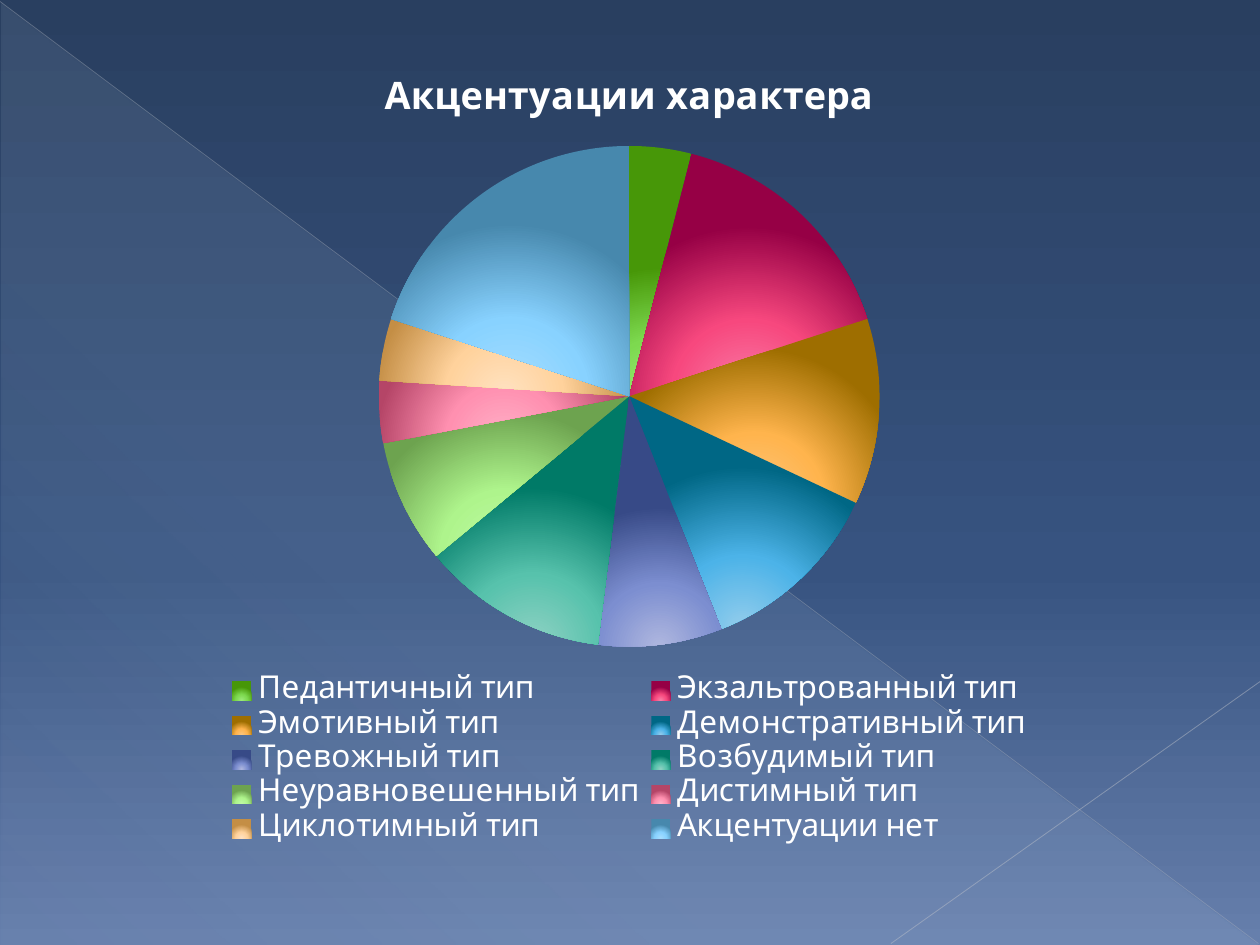
from dataclasses import dataclass

from lxml.etree import SubElement
from pptx import Presentation
from pptx.chart.data import CategoryChartData
from pptx.dml.color import RGBColor
from pptx.enum.chart import XL_CHART_TYPE, XL_LEGEND_POSITION
from pptx.enum.shapes import MSO_CONNECTOR, MSO_SHAPE
from pptx.oxml import parse_xml
from pptx.oxml.ns import nsdecls, qn
from pptx.util import Cm, Pt


@dataclass(frozen=True)
class Theme:
    font: str = "League Spartan"
    text: str = "FFFFFF"
    title_size: float = 21.6
    legend_size: float = 18
    # Each stop: position %, colour, opacity %
    background: tuple = ((0, "293F60", 100), (60, "375380", 100), (100, "667FAC", 100))
    veil: tuple = ((0, "D6ECFF", 10), (70, "D6ECFF", 8), (100, "D6ECFF", 1))
    long_line: str = "B7BCC5"
    short_line: str = "BFC3CB"


TITLE = "Акцентуации характера"
# Type, share, then slice colours from the glowing centre to the rim
SLICES = [
    ("Педантичный тип", 4, "9CEB7A", "7DD94F", "479708"),
    ("Экзальтрованный тип", 16, "F97FA8", "F7487E", "960045"),
    ("Эмотивный тип", 12, "FBC680", "FFB44D", "9E6E00"),
    ("Демонстративный тип", 12, "94CDEC", "4CB3E8", "006785"),
    ("Тревожный тип", 8, "AFB7DF", "7C8ED0", "374A87"),
    ("Возбудимый тип", 12, "90D2C4", "57C2AC", "007A67"),
    ("Неуравновешенный тип", 8, "BFFAA5", "AEF48C", "6DA34F"),
    ("Дистимный тип", 4, "FFB2C8", "FF90B0", "B54567"),
    ("Циклотимный тип", 4, "FFE2C2", "FFD29C", "C48E45"),
    ("Акцентуации нет", 20, "A6DEFF", "88D2FF", "4788AD"),
]


def set_gradient(fill, stops, angle=None):
    """Linear at the given angle; without one, a glow from the bottom centre."""
    marks = "".join(
        f'<a:gs pos="{position * 1000}"><a:srgbClr val="{colour}">'
        f'<a:alpha val="{opacity * 1000}"/></a:srgbClr></a:gs>'
        for position, colour, opacity in stops
    )
    if angle is None:
        direction = ('<a:path path="circle"><a:fillToRect l="50000" t="100000" '
                     'r="50000" b="0"/></a:path>')
    else:
        direction = f'<a:lin ang="{angle * 60000}" scaled="0"/>'
    fill.solid()
    parent = fill._xPr
    parent.replace(parent.find(qn("a:solidFill")), parse_xml(
        f'<a:gradFill {nsdecls("a")} rotWithShape="1"><a:gsLst>{marks}</a:gsLst>'
        f'{direction}</a:gradFill>'))


def set_layout(element, x, y, width, height, inner=False):
    """Place a chart part by fractions of the chart area."""
    layout = element.find(qn("c:layout"))
    if layout is None:
        layout = parse_xml(f'<c:layout {nsdecls("c")}/>')
        position = element.find(qn("c:legendPos"))
        if position is None:
            element.insert(0, layout)
        else:
            position.addnext(layout)
    for child in list(layout):
        layout.remove(child)
    manual = SubElement(layout, qn("c:manualLayout"))
    values = [("layoutTarget", "inner")] if inner else []
    values += [("xMode", "edge"), ("yMode", "edge"),
               ("x", x), ("y", y), ("w", width), ("h", height)]
    for name, value in values:
        SubElement(manual, qn(f"c:{name}")).set("val", str(value))


class SlideBuilder:
    def __init__(self, slide, theme):
        self.slide = slide
        self.theme = theme

    def background(self):
        set_gradient(self.slide.background.fill, self.theme.background, 90)

    def triangle(self, left, top, width, height):
        shape = self.slide.shapes.add_shape(
            MSO_SHAPE.RIGHT_TRIANGLE, Cm(left), Cm(top), Cm(width), Cm(height))
        shape.shadow.inherit = False
        shape.line.fill.background()
        set_gradient(shape.fill, self.theme.veil, 133)

    def line(self, start, end, colour, width, opacity):
        connector = self.slide.shapes.add_connector(
            MSO_CONNECTOR.STRAIGHT, *map(Cm, start + end))
        connector.line.width = Pt(width)
        connector.line.color.rgb = RGBColor.from_string(colour)
        properties = connector._element.spPr
        tint = properties.find(".//" + qn("a:srgbClr"))
        SubElement(tint, qn("a:alpha")).set("val", str(opacity * 1000))
        SubElement(properties, qn("a:effectLst"))

    def style_font(self, font, size, bold=False):
        font.name = self.theme.font
        font.size = Pt(size)
        font.bold = bold
        font.color.rgb = RGBColor.from_string(self.theme.text)

    def pie(self, title, slices, left, top, width, height):
        data = CategoryChartData()
        data.categories = [name for name, *_ in slices]
        data.add_series(title, [share for _, share, *_ in slices])
        chart = self.slide.shapes.add_chart(
            XL_CHART_TYPE.PIE, Cm(left), Cm(top), Cm(width), Cm(height), data).chart
        self.style_font(chart.font, self.theme.legend_size)

        chart.has_title = True
        frame = chart.chart_title.text_frame
        frame.text = title
        self.style_font(frame.paragraphs[0].runs[0].font, self.theme.title_size, True)

        chart.has_legend = True
        chart.legend.position = XL_LEGEND_POSITION.BOTTOM
        chart.legend.include_in_layout = False
        self.style_font(chart.legend.font, self.theme.legend_size)
        set_layout(chart.legend._element, 0.16, 0.77, 0.68, 0.22)

        plot = chart.plots[0]
        plot.vary_by_categories = True
        set_layout(plot._element.getparent(), 0.29, 0.12, 0.42, 0.62, inner=True)
        for index, (_, _, glow, middle, rim) in enumerate(slices):
            style = plot.series[0].points[index].format
            set_gradient(style.fill, ((0, glow, 100), (45, middle, 100), (100, rim, 100)))
            style.line.fill.background()


def main():
    deck = Presentation()
    deck.slide_width, deck.slide_height = Cm(25.4), Cm(19.05)
    theme = Theme()
    page = SlideBuilder(deck.slides.add_slide(deck.slide_layouts[6]), theme)
    page.background()
    page.triangle(0.03, 0.05, 25.35, 19)
    page.line((0, 0.03), (25.37, 19.02), theme.long_line, 0.39, 35)
    page.line((25.4, 13.74), (17.96, 19.02), theme.short_line, 0.47, 45)
    page.pie(TITLE, SLICES, 0.58, 0.99, 24.21, 16.28)
    deck.save("out.pptx")


if __name__ == "__main__":
    main()
